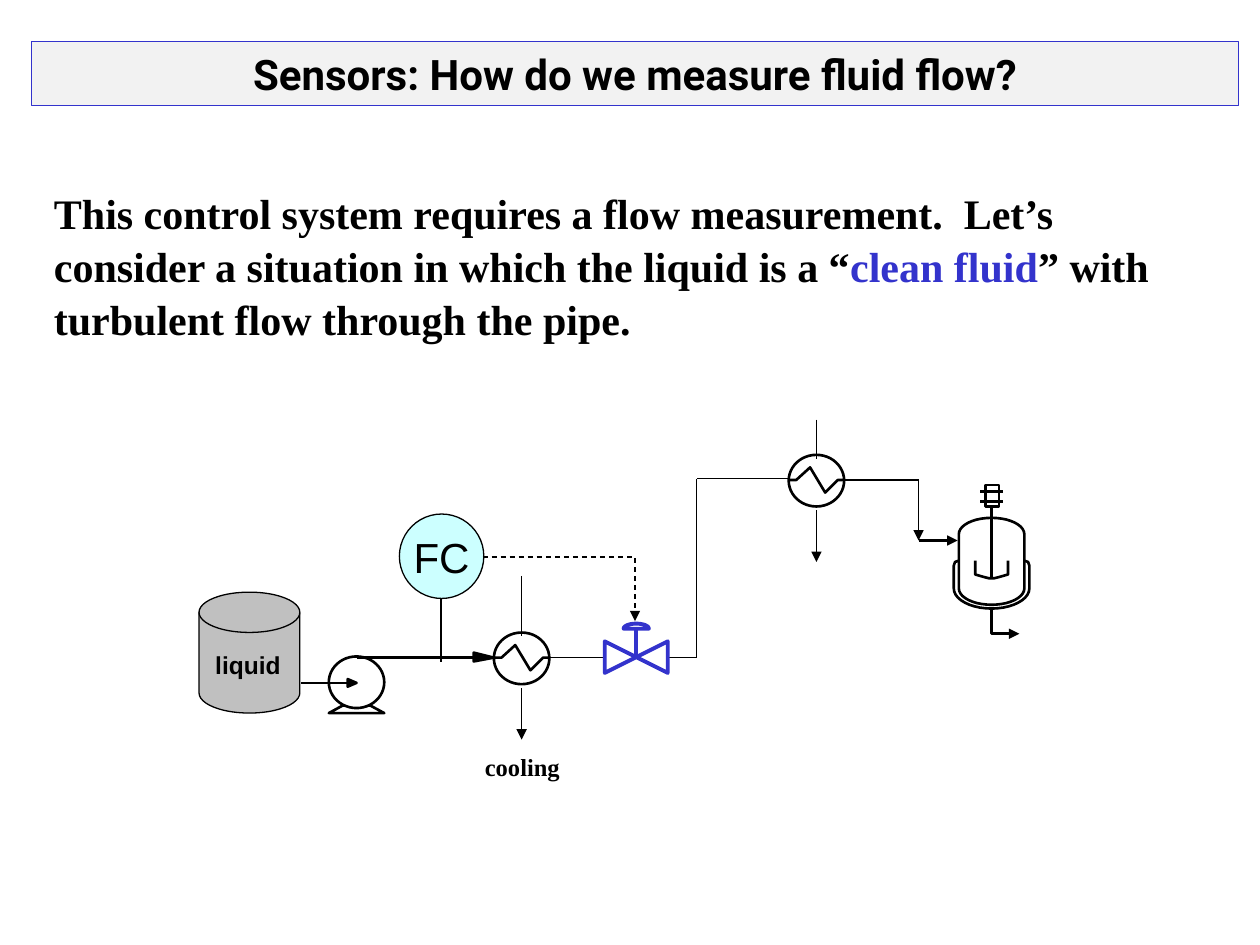
"""Build a slide showing a flow control system that needs a flow measurement."""
from dataclasses import dataclass
from math import cos, pi, sin

from lxml import etree
from pptx import Presentation
from pptx.dml.color import RGBColor
from pptx.enum.dml import MSO_LINE
from pptx.enum.shapes import MSO_CONNECTOR, MSO_SHAPE
from pptx.enum.text import MSO_ANCHOR, MSO_AUTO_SIZE, PP_ALIGN
from pptx.oxml.ns import qn
from pptx.util import Inches, Pt

STRAIGHT = MSO_CONNECTOR.STRAIGHT
RECT, OVAL, TANK = MSO_SHAPE.RECTANGLE, MSO_SHAPE.OVAL, MSO_SHAPE.FLOWCHART_MAGNETIC_DISK
DASH = MSO_LINE.DASH
MIDDLE, NO_FIT = MSO_ANCHOR.MIDDLE, MSO_AUTO_SIZE.NONE
CENTER = PP_ALIGN.CENTER
BLACK, WHITE, BLUE = "000000", "FFFFFF", "3333CC"
THIN, MEDIUM, THICK = 0.75, 1.5, 2.25
TITLE_ONLY = 5


@dataclass
class Pipe:
    x1: float
    y1: float
    x2: float
    y2: float
    width: float = THIN
    arrow: bool = False
    dashed: bool = False
    color: str = BLACK


@dataclass
class Exchanger:
    x: float
    y: float
    inlet_top: float


@dataclass
class Label:
    text: str
    box: tuple[float, float, float, float]
    font: str


EXCHANGERS = [Exchanger(4.14, 5.22, 4.57), Exchanger(6.48, 3.81, 3.33)]
PIPES = [
    Pipe(2.39, 5.42, 2.77, 5.42, MEDIUM),
    Pipe(2.83, 5.22, 3.78, 5.22, MEDIUM),
    Pipe(4.36, 5.22, 5.53, 5.22),
    Pipe(5.53, 5.22, 5.53, 3.8),
    Pipe(5.53, 3.8, 6.27, 3.8),
    Pipe(6.7, 3.81, 7.29, 3.81),
    Pipe(7.29, 3.81, 7.29, 4.29, arrow=True),
    Pipe(7.29, 4.29, 7.6, 4.29, MEDIUM, arrow=True),
]
SIGNALS = [
    Pipe(3.5, 4.75, 3.5, 5.25),
    Pipe(3.83, 4.42, 5.04, 4.42, dashed=True),
    Pipe(5.04, 4.43, 5.04, 4.93, arrow=True, dashed=True),
]
LABELS = [
    Label("cooling", (3.75, 5.92, 1, 0.33), "Times New Roman"),
    Label("liquid", (1.61, 5.11, 0.75, 0.33), "Arial"),
]


def rgb(color: str) -> RGBColor:
    return RGBColor.from_string(color)


def set_font(p, name: str, size: float, bold: bool = True) -> None:
    p.font.name, p.font.size, p.font.bold = name, Pt(size), bold
    p.font.color.rgb = rgb(BLACK)


def paint(s, fill: str | None, line: str, width: float) -> None:
    if fill:
        s.fill.solid()
        s.fill.fore_color.rgb = rgb(fill)
    else:
        s.fill.background()
    s.line.color.rgb, s.line.width = rgb(line), Pt(width)


def add_arrow(s) -> None:
    etree.SubElement(s.element.spPr.find(qn("a:ln")), qn("a:tailEnd"), type="triangle")


def preset(sp, kind, box, fill: str, width: float = MEDIUM):
    s = sp.add_shape(kind, *map(Inches, box))
    s.shadow.inherit = False
    paint(s, fill, BLACK, width)
    return s


def outline(sp, points, fill: str | None = None, line: str = BLACK,
            width: float = MEDIUM, close: bool = True):
    start, *rest = [(Inches(x), Inches(y)) for x, y in points]
    builder = sp.build_freeform(*start)
    builder.add_line_segments(rest, close=close)
    s = builder.convert_to_shape()
    s.shadow.inherit = False
    paint(s, fill, line, width)
    return s


def arc(x: float, y: float, rx: float, ry: float, start: float, end: float, steps: int = 20):
    angles = [start + (end - start) * i / steps for i in range(steps + 1)]
    return [(x + rx * cos(a), y + ry * sin(a)) for a in angles]


def draw_pipe(sp, pipe: Pipe) -> None:
    s = sp.add_connector(STRAIGHT, *map(Inches, (pipe.x1, pipe.y1, pipe.x2, pipe.y2)))
    s.line.color.rgb, s.line.width = rgb(pipe.color), Pt(pipe.width)
    if pipe.dashed:
        s.line.dash_style = DASH
    if pipe.arrow:
        add_arrow(s)
    etree.SubElement(s.element.spPr, qn("a:effectLst"))


def draw_exchanger(sp, ex: Exchanger) -> None:
    x, y = ex.x, ex.y
    preset(sp, OVAL, (x - 0.22, y - 0.2, 0.44, 0.41), WHITE)
    zigzag = [(-0.22, 0), (-0.16, 0), (-0.05, -0.1), (0.07, 0.1), (0.17, 0), (0.22, 0)]
    outline(sp, [(x + dx, y + dy) for dx, dy in zigzag], close=False)
    draw_pipe(sp, Pipe(x, ex.inlet_top, x, y - 0.17))
    draw_pipe(sp, Pipe(x, y + 0.24, x, y + 0.65, arrow=True))


def draw_pump(sp) -> None:
    outline(sp, [(2.72, 5.6), (2.61, 5.66), (3.05, 5.66), (2.94, 5.6)], WHITE)
    preset(sp, OVAL, (2.61, 5.21, 0.44, 0.41), WHITE)
    outline(sp, [(2.76, 5.39), (2.83, 5.42), (2.76, 5.45)], BLACK)
    outline(sp, [(3.76, 5.18), (3.92, 5.22), (3.76, 5.25)], BLACK)


def draw_reactor(sp) -> None:
    x, y = 7.87, 4.67
    jacket = [(7.61, 4.45), (8.13, 4.45), (8.16, 4.46), (8.17, 4.49)]
    outline(sp, jacket + arc(x, y, 0.3, 0.16, 0, pi) + [(7.57, 4.49), (7.58, 4.46)], WHITE)
    outline(sp, arc(x, y, 0.26, 0.13, 0, pi) + arc(x, 4.24, 0.26, 0.13, pi, 2 * pi), WHITE)
    draw_pipe(sp, Pipe(x, 4.59, x, 3.94, MEDIUM))
    preset(sp, RECT, (7.82, 3.85, 0.11, 0.17), WHITE)
    for bar in (3.9, 3.98):
        draw_pipe(sp, Pipe(7.78, bar, 7.96, bar, MEDIUM))
    outline(sp, [(7.74, 4.45), (7.74, 4.56), (7.81, 4.58), (7.85, 4.59), (7.89, 4.59),
                 (7.93, 4.58), (8, 4.56), (8, 4.45)], close=False)
    add_arrow(outline(sp, [(x, 4.83), (x, 5.03), (8.09, 5.03)], close=False))


def draw_valve(sp) -> None:
    outline(sp, [(4.8, 5.09), (5.3, 5.34), (5.3, 5.09), (4.8, 5.34)], WHITE, BLUE, THICK)
    outline(sp, arc(5.05, 4.99, 0.1, 0.04, pi, 2 * pi), WHITE, BLUE, THICK)
    draw_pipe(sp, Pipe(5.05, 5.21, 5.05, 4.99, THICK, color=BLUE))


def draw_controller(sp) -> None:
    s = preset(sp, OVAL, (3.17, 4.08, 0.67, 0.67), "CCFFFF", THIN)
    tf = s.text_frame
    tf.word_wrap, tf.vertical_anchor = False, MIDDLE
    p = tf.paragraphs[0]
    p.text, p.alignment = "FC", CENTER
    set_font(p, "Arial", 24, False)


def add_text(sp, box):
    tf = sp.add_textbox(*map(Inches, box)).text_frame
    tf.word_wrap = True
    return tf.paragraphs[0]


def draw_title(s) -> None:
    s.left, s.top, s.width, s.height = map(Inches, (0.25, 0.33, 9.58, 0.51))
    paint(s, "F2F2F2", BLUE, THIN)
    tf = s.text_frame
    tf.auto_size, tf.vertical_anchor = NO_FIT, MIDDLE
    p = tf.paragraphs[0]
    p.text, p.alignment = "Sensors: How do we measure fluid flow?", CENTER
    set_font(p, "Roboto", 24)


def draw_statement(sp) -> None:
    p = add_text(sp, (0.33, 1.42, 9.33, 1.3))
    p.line_spacing = 1.05
    set_font(p, "Times New Roman", 24)
    p.add_run().text = ("This control system requires a flow measurement.  Let’s consider "
                        "a situation in which the liquid is a “")
    r = p.add_run()
    r.text, r.font.color.rgb = "clean fluid", rgb(BLUE)
    p.add_run().text = "” with turbulent flow through the pipe."


def main() -> None:
    prs = Presentation()
    prs.slide_width, prs.slide_height = Inches(10), Inches(7.5)
    slide = prs.slides.add_slide(prs.slide_layouts[TITLE_ONLY])
    sp = slide.shapes
    draw_title(sp.title)
    draw_statement(sp)
    draw_pump(sp)
    preset(sp, TANK, (1.58, 4.7, 0.8, 0.96), "C0C0C0", THIN)
    for ex in EXCHANGERS:
        draw_exchanger(sp, ex)
    draw_reactor(sp)
    for pipe in PIPES:
        draw_pipe(sp, pipe)
    draw_valve(sp)
    draw_controller(sp)
    for signal in SIGNALS:
        draw_pipe(sp, signal)
    for label in LABELS:
        p = add_text(sp, label.box)
        p.text = label.text
        set_font(p, label.font, 14)
    prs.save("out.pptx")


if __name__ == "__main__":
    main()
